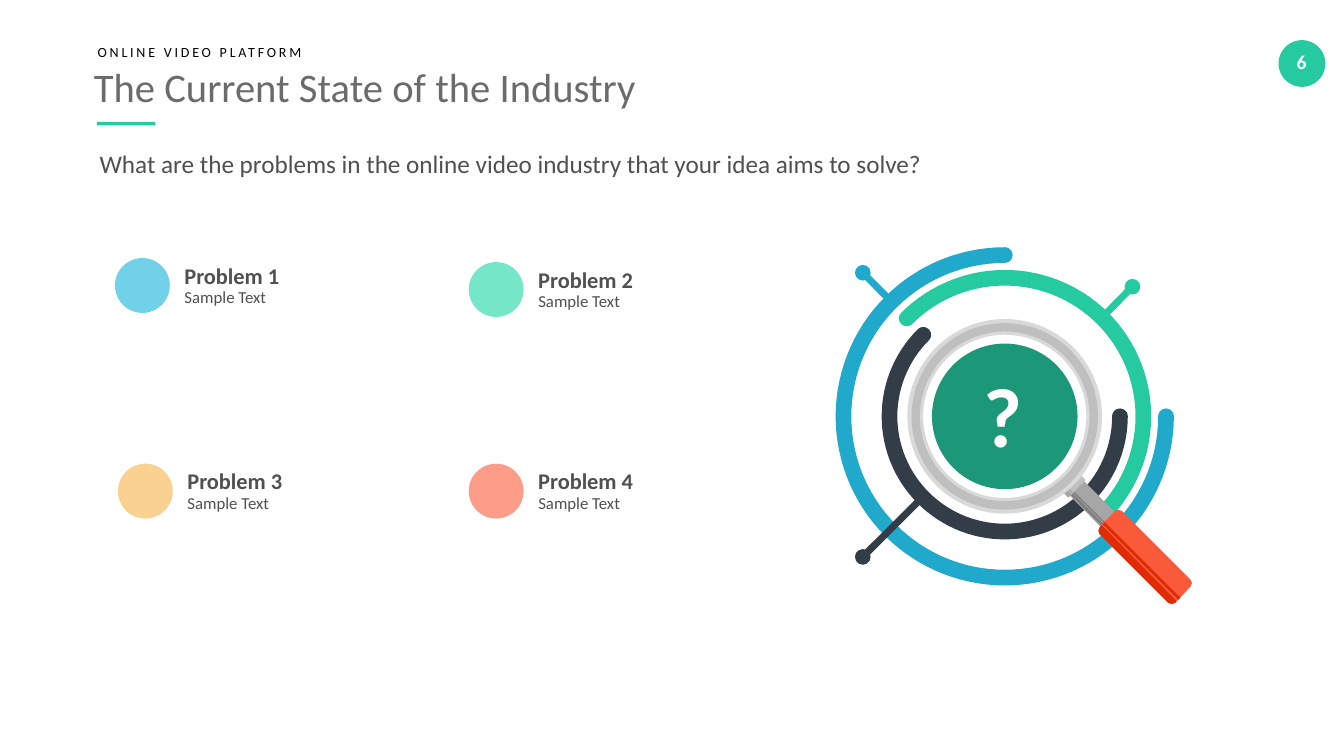
from math import cos, sin, radians, hypot
from pptx import Presentation
from pptx import util as u
from pptx.dml.color import RGBColor
from pptx.enum import shapes, text

Pt = u.Pt
KIND = shapes.MSO_SHAPE
WHITE = RGBColor(0xFF, 0xFF, 0xFF)
BLACK = RGBColor(0, 0, 0)
TITLE = RGBColor(0x6B, 0x6B, 0x6B)
BODY = RGBColor(0x50, 0x50, 0x50)
GREEN = RGBColor(0x25, 0xCA, 0xA0)
BLUE = RGBColor(0x20, 0xA9, 0xCA)
NAVY = RGBColor(0x33, 0x3D, 0x47)
DEEP = RGBColor(0x1C, 0x97, 0x78)
SKY = RGBColor(0x70, 0xD1, 0xE8)
MINT = RGBColor(0x76, 0xE6, 0xC9)
SAND = RGBColor(0xFB, 0xD1, 0x91)
CORAL = RGBColor(0xFB, 0x9D, 0x89)
RED = RGBColor(0xF9, 0x5B, 0x3A)
RUST = RGBColor(0xDF, 0x2C, 0x07)
PALE = RGBColor(0xD9, 0xD9, 0xD9)
LIGHT = RGBColor(0xBF, 0xBF, 0xBF)
GREY = RGBColor(0xA6, 0xA6, 0xA6)
DARK = RGBColor(0x80, 0x80, 0x80)

deck = Presentation()
deck.slide_width, deck.slide_height = Pt(960), Pt(540)
slide = deck.slides.add_slide(deck.slide_layouts[6])
items = slide.shapes


def paint(shape, tint):
    shape.shadow.inherit = False
    shape.fill.solid()
    shape.fill.fore_color.rgb = tint
    shape.line.fill.background()


def write(words, x, y, w, h, size, tint, bold=False, inset=True):
    box = items.add_textbox(Pt(x), Pt(y), Pt(w), Pt(h))
    frame = box.text_frame
    frame.word_wrap = True
    if not inset:
        frame.margin_left = frame.margin_right = 0
        frame.margin_top = frame.margin_bottom = 0
        frame.vertical_anchor = text.MSO_ANCHOR.MIDDLE
    para = frame.paragraphs[0]
    para.text = words
    font = para.font
    font.name, font.size, font.bold = "Calibri", Pt(size), bold
    font.color.rgb = tint
    return para


# Header
write("The Current State of the Industry", 67, 43.9, 450, 35.3, 29, TITLE, inset=False)
brow = write("ONLINE VIDEO PLATFORM", 69.8, 31, 200, 12.2, 10, BLACK, inset=False)
brow.runs[0]._r.get_or_add_rPr().set("spc", "200")
rule = items.add_shape(KIND.RECTANGLE, Pt(69.1), Pt(87.1), Pt(41.8), Pt(2.4))
paint(rule, GREEN)
write("What are the problems in the online video industry that your idea aims to solve?",
      64.1, 102.2, 668, 29, 18, BODY)

# Problems
spots = [(82.1, 184.3, SKY), (334.8, 187.2, MINT),
         (84.2, 331.2, SAND), (334.8, 331.2, CORAL)]
for n, (x, y, tint) in enumerate(spots, 1):
    head = write(f"Problem {n}", x + 42.6, y - 4.6, 100, 29, 16, BODY, bold=True)
    head.line_spacing = 1.2
    write("Sample Text", x + 42.6, y + 17, 217.4, 21.8, 12, BODY)

# Discs: centre, diameter, colour
midx, midy = 717.7, 297.4
pins = [(616.3, 194.8, 637.5, 216.3, BLUE),
        (808.9, 204.8, 787.7, 226.4, GREEN),
        (616.3, 397.8, 659.2, 355, NAVY)]
discs = [(x + 19.6, y + 19.6, 39.2, tint) for x, y, tint in spots]
discs += [(x, y, 11.2, tint) for x, y, _, _, tint in pins]
discs += [(midx, midy, 104, DEEP), (930, 45.4, 33.4, GREEN)]
for x, y, d, tint in discs:
    disc = items.add_shape(KIND.OVAL, Pt(x - d / 2), Pt(y - d / 2), Pt(d), Pt(d))
    paint(disc, tint)

# Page number
page = write("6", 907.2, 32.4, 45, 24.5, 14, WHITE, bold=True)
page.alignment = text.PP_ALIGN.CENTER

# Arcs with round ends, angles clockwise from the right
arcs = []
half = 5.6
for rad, start, end, tint in [(115.2, 0, 270, BLUE), (99, 225, 405, GREEN),
                              (82.3, 0, 225, NAVY)]:
    pts = []
    for r, a, b in [(rad + half, start, end), (rad - half, end, start)]:
        step = 3 if b > a else -3
        for deg in range(a, b + step, step):
            t = radians(deg)
            pts.append((midx + r * cos(t), midy + r * sin(t)))
        # Cap at the end of this edge
        t = radians(b)
        turn = 0 if b > a else 180
        for deg in range(15, 180, 15):
            c = t + radians(deg + turn)
            pts.append((midx + rad * cos(t) + half * cos(c),
                        midy + rad * sin(t) + half * sin(c)))
    arcs.append((pts, tint))

# Straight bars: from, to, width, colour
bars = [(*pin[:4], 5, pin[4]) for pin in pins]
bars += [(765.4, 344.9, 798.1, 378, 14.5, GREY),
         (761, 348.5, 794.2, 381.6, 2, DARK),
         (762.8, 347.4, 796, 380.2, 1, DARK),
         (764.6, 344.5, 769.3, 349.2, 17.6, LIGHT),
         (759.6, 349.6, 764.3, 354.2, 3, GREY),
         (761.4, 347.4, 766.4, 352.4, 1, GREY),
         (788.4, 373.7, 842.4, 427.7, 2, RUST)]
strips = []
for x, y, p, q, wide, tint in bars:
    k = wide / 2 / hypot(p - x, q - y)
    dx, dy = (y - q) * k, (p - x) * k
    strips.append(([(x + dx, y + dy), (p + dx, q + dy),
                    (p - dx, q - dy), (x - dx, y - dy)], tint))

# Handle and its shaded side
edge = [(785.5, 376.6), (784.6, 379.1), (785.5, 381.6),
        (834.5, 430.6), (837, 431.4), (839.5, 430.6)]
grip = edge + [(850.3, 419), (851.4, 416.5), (850.3, 414),
               (801.4, 365), (798.8, 364.2), (796.3, 365)]
shade = [(787, 375.1)] + edge + [(840.2, 429.1)]

# Outlines, back to front
for pts, tint in arcs + strips[:-1] + [(grip, RED), strips[-1], (shade, RUST)]:
    spots = [(Pt(x), Pt(y)) for x, y in pts]
    form = items.build_freeform(*spots[0], scale=1.0)
    form.add_line_segments(spots[1:], close=True)
    paint(form.convert_to_shape(), tint)

# Lens rim
for d, thick, tint in [(139, 11.2, PALE), (133.2, 6, LIGHT)]:
    rim = items.add_shape(KIND.DONUT, Pt(midx - d / 2), Pt(midy - d / 2), Pt(d), Pt(d))
    rim.adjustments[0] = thick / d
    paint(rim, tint)

write("?", 695.5, 256.3, 60, 80, 60, WHITE, bold=True)

deck.save("out.pptx")
